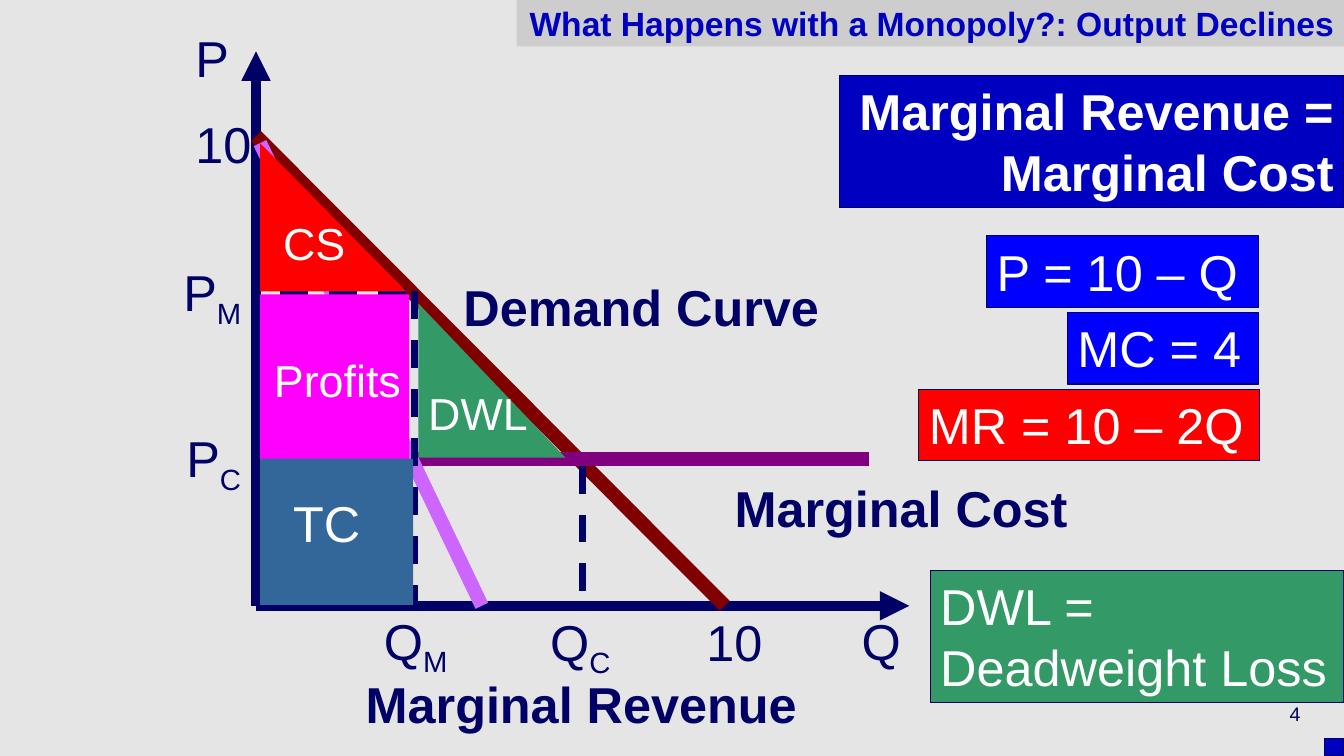
from dataclasses import dataclass
from typing import NamedTuple, Optional

from lxml.etree import SubElement
from pptx import Presentation
from pptx.dml.color import RGBColor
from pptx.enum.dml import MSO_LINE_DASH_STYLE as Dash
from pptx.enum.shapes import MSO_CONNECTOR_TYPE as Link
from pptx.enum.shapes import MSO_SHAPE as Preset
from pptx.enum.text import MSO_ANCHOR as Anchor
from pptx.enum.text import PP_ALIGN as Align
from pptx.oxml.ns import qn
from pptx.util import Inches, Pt

COLUMNS, ROWS = 160, 90
CELL = Inches(7.5) / ROWS


@dataclass(frozen=True)
class Theme:
    font: str = "Arial"
    backdrop: str = "E5E5E5"
    banner: str = "CDCDCD"
    navy: str = "000066"
    royal: str = "0000C0"
    blue: str = "0000FF"
    white: str = "FFFFFF"
    red: str = "FF0000"
    magenta: str = "FF00FF"
    green: str = "339966"
    steel: str = "336699"
    maroon: str = "800000"
    purple: str = "800080"
    violet: str = "CC66FF"
    large: int = 36
    medium: int = 32
    heading: int = 24
    small: int = 14
    outline: float = 0.75
    axis: int = 7
    curve: int = 10
    guide: int = 5


THEME = Theme()
LINE, SHORT_LINE, TWO_LINES = 8.52, 7.68, 15.72
FLOOR, AXIS, AREA_LEFT = 72.12, 30.48, 30.96
COST, MONOPOLY_PRICE = 54.6, 34.7
MONOPOLY_OUTPUT, COMPETITIVE_OUTPUT = 49.32, 69.36
CURVE_TOP, AREA_TOP = 16.2, 17.04


class Stroke(NamedTuple):
    x1: float
    y1: float
    x2: float
    y2: float
    color: str
    weight: int
    dashed: bool = False
    arrow: bool = False


class Area(NamedTuple):
    preset: Preset
    left: float
    top: float
    width: float
    height: float
    color: str


class Label(NamedTuple):
    text: str
    left: float
    top: float
    width: float
    height: float = LINE
    size: int = THEME.large
    color: str = THEME.navy
    bold: bool = False
    subscript: str = ""
    align: Align = Align.LEFT
    anchor: Anchor = Anchor.TOP
    wrap: bool = False


class Panel(NamedTuple):
    label: Label
    fill: str
    outlined: bool = True


STROKES = [
    Stroke(AXIS, FLOOR, 108.24, FLOOR, THEME.navy, THEME.axis, arrow=True),
    Stroke(AXIS, FLOOR, AXIS, 6.12, THEME.navy, THEME.axis, arrow=True),
    Stroke(AXIS, CURVE_TOP, 86.28, FLOOR, THEME.maroon, THEME.curve),
    Stroke(31.2, COST, 103.44, COST, THEME.purple, THEME.curve),
    Stroke(COMPETITIVE_OUTPUT, 55.44, COMPETITIVE_OUTPUT, 72, THEME.navy, THEME.guide, dashed=True),
    Stroke(AREA_LEFT, AREA_TOP, 57.36, FLOOR, THEME.violet, THEME.curve),
    Stroke(MONOPOLY_OUTPUT, MONOPOLY_PRICE, MONOPOLY_OUTPUT, 72, THEME.navy, THEME.guide, dashed=True),
    Stroke(48.36, MONOPOLY_PRICE, AREA_LEFT, MONOPOLY_PRICE, THEME.navy, THEME.guide, dashed=True),
]

AREAS = [
    Area(Preset.RIGHT_TRIANGLE, AREA_LEFT, AREA_TOP, 17.4, 17.64, THEME.red),
    Area(Preset.RECTANGLE, AREA_LEFT, 35.04, 17.76, 20.28, THEME.magenta),
    Area(Preset.RIGHT_TRIANGLE, 49.8, 36.12, 17.52, 18.36, THEME.green),
    Area(Preset.RECTANGLE, AREA_LEFT, COST, 18.24, 17.4, THEME.steel),
]

LABELS = [
    Label("P", 22.08, 2.64, 10.08, wrap=True),
    Label("10", 22.08, 12.84, 9.12),
    Label("P", 20.64, 30.48, 9.84, subscript="M"),
    Label("P", 21, 50.28, 9.36, subscript="C"),
    Label("Q", 44.52, 72, 10.56, subscript="M"),
    Label("Q", 64.32, FLOOR, 10.08, subscript="C"),
    Label("10", 82.92, FLOOR, 9.24),
    Label("Q", 101.4, 72, 7.2),
    Label("Demand Curve", 54, 32.28, 47.64, bold=True, wrap=True),
    Label("Marginal Cost", 86.28, 56.16, 42.48, bold=True),
    Label("Marginal Revenue", 42.36, 79.56, 54.24, bold=True),
    Label("CS", 32.52, 25.08, 9.96, SHORT_LINE, THEME.medium, THEME.white),
    Label("Profits", 31.44, 41.4, 17.64, SHORT_LINE, THEME.medium, THEME.white),
    Label("DWL", 49.8, 45.36, 14.4, SHORT_LINE, THEME.medium, THEME.white),
    Label("TC", 33.72, 57.96, 10.44, color=THEME.white),
    Label("4", 122.64, 81.96, 33.36, 6, THEME.small, align=Align.RIGHT, anchor=Anchor.MIDDLE, wrap=True),
]

PANELS = [
    Panel(Label("What Happens with a Monopoly?: Output Declines", 61.5, 0, 98.5, 5.52, THEME.heading,
                THEME.royal, True, align=Align.RIGHT, anchor=Anchor.MIDDLE, wrap=True), THEME.banner, False),
    Panel(Label("", 157.68, 87.96, 2.32, 2.04), THEME.royal),
    Panel(Label("Marginal Revenue = Marginal Cost", 99.9, 9, 60.1, TWO_LINES, color=THEME.white,
                bold=True, align=Align.RIGHT, wrap=True), THEME.royal),
    Panel(Label("P = 10 – Q", 117.48, 28.08, 32.4, color=THEME.white, wrap=True), THEME.blue),
    Panel(Label("MC = 4", 127.08, 37.2, 22.7, color=THEME.white, wrap=True), THEME.blue),
    Panel(Label("MR = 10 – 2Q", 109.4, 46.32, 40.56, color=THEME.white, wrap=True), THEME.red),
    Panel(Label("DWL = Deadweight Loss", 110.76, 67.92, 49.24, TWO_LINES, color=THEME.white, wrap=True),
          THEME.green),
]


def cells(*counts: float) -> list[int]:
    return [round(count * CELL) for count in counts]


def rgb(color: str) -> RGBColor:
    return RGBColor.from_string(color)


def draw_stroke(page, stroke: Stroke) -> None:
    connector = page.shapes.add_connector(
        Link.STRAIGHT, *cells(stroke.x1, stroke.y1, stroke.x2, stroke.y2))
    connector.line.color.rgb = rgb(stroke.color)
    connector.line.width = Pt(stroke.weight)
    if stroke.dashed:
        connector.line.dash_style = Dash.DASH
    properties = connector._element.spPr
    if stroke.arrow:
        SubElement(properties.find(qn("a:ln")), qn("a:tailEnd"), type="triangle")
    SubElement(properties, qn("a:effectLst"))


def draw_area(page, area: Area, outline: Optional[str] = None):
    shape = page.shapes.add_shape(
        area.preset, *cells(area.left, area.top, area.width, area.height))
    shape.shadow.inherit = False
    shape.fill.solid()
    shape.fill.fore_color.rgb = rgb(area.color)
    if outline:
        shape.line.color.rgb = rgb(outline)
        shape.line.width = Pt(THEME.outline)
    else:
        shape.line.fill.background()
    return shape


def write(box, label: Label) -> None:
    frame = box.text_frame
    frame.text = label.text
    frame.word_wrap = label.wrap
    frame.vertical_anchor = label.anchor
    para = frame.paragraphs[0]
    para.alignment = label.align
    if label.subscript:
        span = para.add_run()
        span.text = label.subscript
        span.font._element.set("baseline", "-25000")
    for span in para.runs:
        span.font.name = THEME.font
        span.font.size = Pt(label.size)
        span.font.bold = label.bold
        span.font.color.rgb = rgb(label.color)


def draw_label(page, label: Label) -> None:
    write(page.shapes.add_textbox(*cells(label.left, label.top, label.width, label.height)), label)


def draw_panel(page, panel: Panel) -> None:
    label = panel.label
    area = Area(Preset.RECTANGLE, label.left, label.top, label.width, label.height, panel.fill)
    shape = draw_area(page, area, THEME.navy if panel.outlined else None)
    if label.text:
        write(shape, label)


def main() -> None:
    deck = Presentation()
    deck.slide_width, deck.slide_height = cells(COLUMNS, ROWS)
    page = deck.slides.add_slide(deck.slide_layouts[6])
    page.background.fill.solid()
    page.background.fill.fore_color.rgb = rgb(THEME.backdrop)
    for items, draw in ((STROKES, draw_stroke), (AREAS, draw_area), (PANELS, draw_panel), (LABELS, draw_label)):
        for item in items:
            draw(page, item)
    deck.save("out.pptx")


if __name__ == "__main__":
    main()
